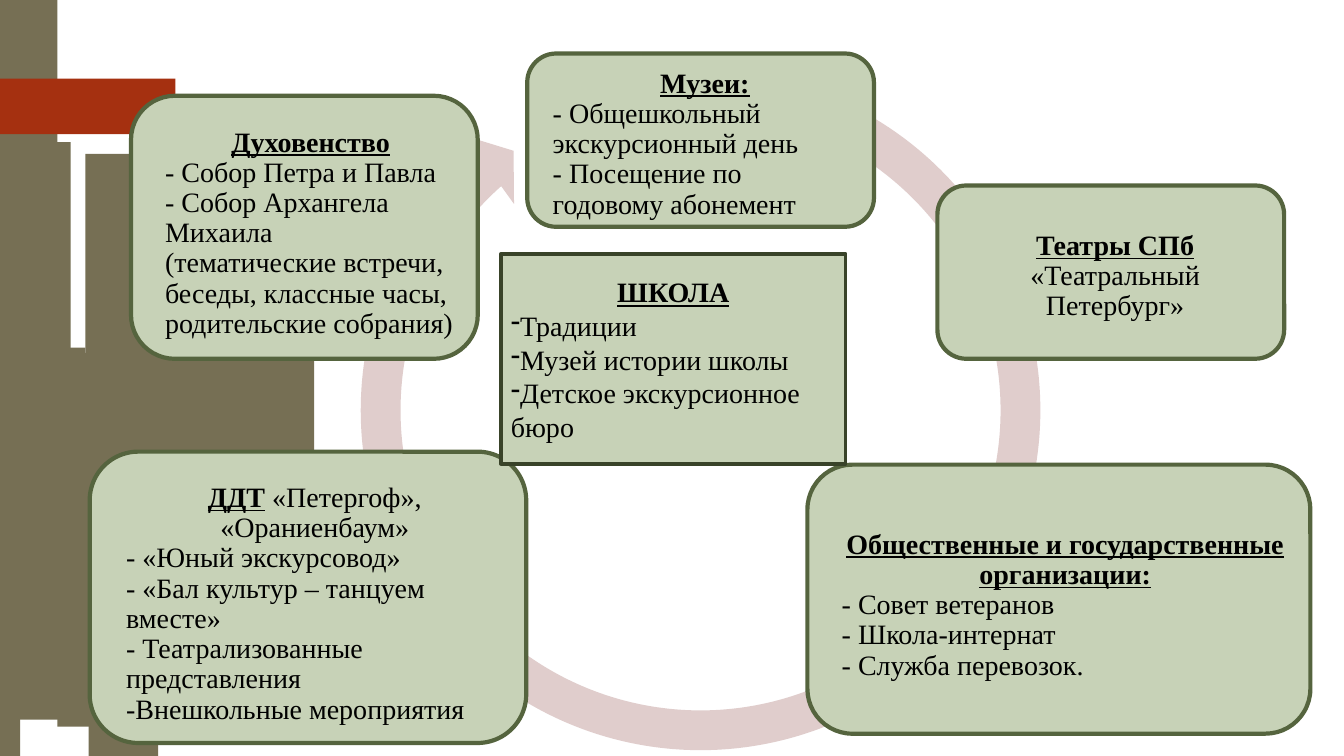
from lxml.etree import SubElement
from pptx import Presentation
from pptx.dml.color import RGBColor
from pptx.enum.shapes import MSO_SHAPE as Kind
from pptx.enum.text import MSO_ANCHOR as Anchor, PP_ALIGN as Align
from pptx.oxml.ns import qn
from pptx.util import Pt

OLIVE = RGBColor(0x76, 0x6F, 0x54)
RUST = RGBColor(0xA5, 0x30, 0x10)
PINK = RGBColor(0xE0, 0xCD, 0xCC)
SAGE = RGBColor(0xC7, 0xD2, 0xB7)
GREEN = RGBColor(0x55, 0x64, 0x3E)
DARK = RGBColor(0x39, 0x43, 0x29)
BLACK = RGBColor(0, 0, 0)

BARS = [
    (0, 203, 8, 49), (10, 248.4, 51, 183), (63.4, 429, 48.2, 111),
    (75.6, 512, 13.7, 28), (8, 252, 65, 262), (61, 110, 163.4, 319),
    (72.7, 514, 13, 26), (67, 492, 18.7, 48), (2, 0, 39, 346),
    (43, 340, 33, 124.6), (79, 461.5, 34, 78.5), (41, 343.4, 43, 175.7),
    (36.7, 101.5, 13.7, 238), (88, 517.7, 10.8, 22.3),
    (39.6, 323.3, 6.5, 40.3), (76.3, 247.7, 110.9, 213.8),
    (84, 520, 9.4, 20), (79, 497.5, 16.6, 42), (0, 0, 14.4, 540),
]

# place, inset, heading, rest of heading line, body lines, body alignment
CARDS = [
    ((376.6, 38.2, 247.7, 123.8), 12.2, "Музеи:", "",
     ["- Общешкольный экскурсионный день",
      "- Посещение по годовому абонемент"], Align.LEFT),
    ((669.6, 132.5, 247.7, 123.8), 12.2, "Театры СПб", "",
     ["«Театральный Петербург»"], Align.CENTER),
    ((576.7, 331.9, 359.3, 192.2), 15.1,
     "Общественные и государственные организации:", "",
     ["- Совет ветеранов", "- Школа-интернат",
      "- Служба перевозок."], Align.LEFT),
    ((64.1, 322.6, 311.8, 208.1), 15.8, "ДДТ", " «Петергоф», «Ораниенбаум»",
     ["- «Юный экскурсовод»", "- «Бал культур – танцуем вместе»",
      "- Театрализованные представления",
      "-Внешкольные мероприятия"], Align.LEFT),
    ((93.6, 68.4, 247.7, 187.9), 15.1, "Духовенство", "",
     ["- Собор Петра и Павла", "- Собор Архангела Михаила",
      "(тематические встречи, беседы, классные часы, "
      "родительские собрания)"], Align.LEFT),
]


class Board:
    """Holds the text style and the slide being drawn."""
    font = "Times New Roman"
    size = Pt(20)

    def __init__(self, slide):
        self.slide = slide

    def shape(self, kind, place, fill, line=None, width=0, adjs=()):
        item = self.slide.shapes.add_shape(kind, *map(Pt, place))
        item.shadow.inherit = False
        item.fill.solid()
        item.fill.fore_color.rgb = fill
        if line is None:
            item.line.fill.background()
        else:
            item.line.color.rgb = line
            item.line.width = Pt(width)
        for i, adj in enumerate(adjs):
            item.adjustments[i] = adj
        return item

    def style(self, run, head=False):
        font = run.font
        font.name, font.size = self.font, self.size
        font.color.rgb = BLACK
        font.bold = font.underline = head

    def text(self, item, insets, head, tail, lines, align, gap):
        """Write a bold heading and body lines; return the body paragraphs."""
        frame = item.text_frame
        frame.word_wrap = True
        frame.vertical_anchor = Anchor.MIDDLE
        (frame.margin_left, frame.margin_top,
         frame.margin_right, frame.margin_bottom) = map(Pt, insets)
        title = frame.paragraphs[0]
        title.text = head
        title.alignment = Align.CENTER
        title.line_spacing = gap
        self.style(title.runs[0], True)
        if tail:
            run = title.add_run()
            run.text = tail
            self.style(run)
        body = []
        for line in lines:
            para = frame.add_paragraph()
            para.text = line
            para.alignment = align
            para.line_spacing = gap
            self.style(para.runs[0])
            body.append(para)
        return body

    def card(self, place, inset, head, tail, lines, align):
        item = self.shape(Kind.ROUNDED_RECTANGLE, place, SAGE, GREEN, 3, [0.167])
        self.text(item, (inset, inset, 6, 6), head, tail, lines, align, 0.9)

    def hub(self, place, head, lines):
        item = self.shape(Kind.SNIP_2_SAME_RECTANGLE, place, SAGE, DARK, 2.75, [0, 0])
        body = self.text(item, (7.2, 3.6, 7.2, 3.6), head, "", lines, Align.LEFT, 1.0)
        for para in body:
            props = para._p.get_or_add_pPr()
            SubElement(props, qn("a:buFontTx"))
            SubElement(props, qn("a:buChar")).set("char", "-")


def main():
    deck = Presentation()
    deck.slide_width, deck.slide_height = Pt(960), Pt(540)
    board = Board(deck.slides.add_slide(deck.slide_layouts[6]))
    for place in BARS:
        board.shape(Kind.RECTANGLE, place, OLIVE)
    board.shape(Kind.RECTANGLE, (0, 56.2, 125.3, 39.6), RUST)
    board.shape(Kind.CIRCULAR_ARROW, (241.9, 34.6, 517, 517), PINK,
                adjs=[0.055, 3.307, 137.233, 174.181, 0.058])
    for card in CARDS:
        board.card(*card)
    board.hub((357.8, 181.4, 246.2, 149.8), "ШКОЛА",
              ["Традиции", "Музей истории школы", "Детское экскурсионное бюро"])
    deck.save("out.pptx")


if __name__ == "__main__":
    main()
